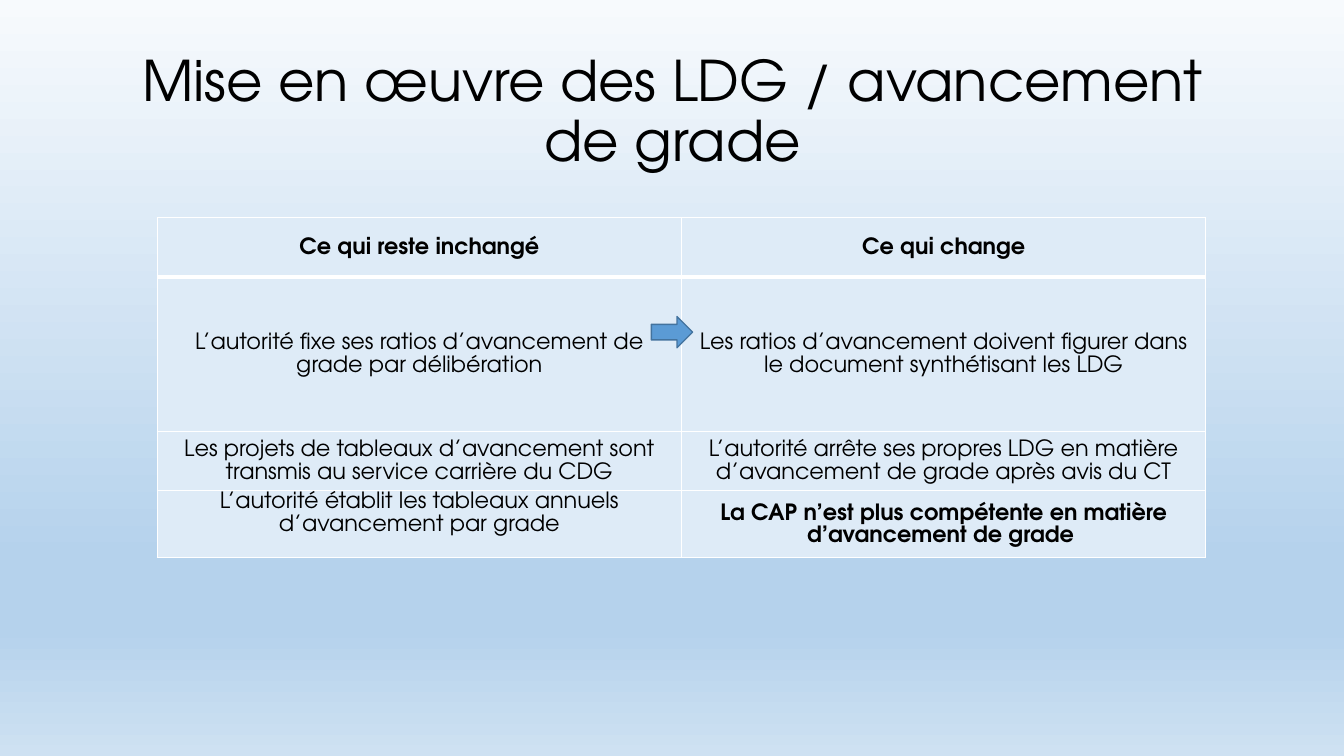
"""Build the slide on promotion guidelines with its comparison table."""
import dataclasses

import lxml.etree
import pptx
import pptx.dml.color
import pptx.enum.shapes
import pptx.enum.text
import pptx.oxml.ns
import pptx.util

PX = 9144
CELL_MARGIN = 7
ROW_HEIGHTS = (59, 153, 59, 59)
ROWS = (
    ("Ce qui reste inchangé", "Ce qui change"),
    ("L’autorité fixe ses ratios d’avancement de grade par délibération",
     "Les ratios d’avancement doivent figurer dans le document synthétisant les LDG"),
    ("Les projets de tableaux d’avancement sont transmis au service carrière du CDG",
     "L’autorité arrête ses propres LDG en matière d’avancement de grade après avis du CT"),
    ("L’autorité établit les tableaux annuels d’avancement par grade",
     "La CAP n’est plus compétente en matière d’avancement de grade "),
)
BOLD_CELLS = {(0, 0), (0, 1), (3, 1)}
BOTTOM_MARGINS = {(3, 0): 22}


@dataclasses.dataclass(frozen=True)
class Theme:
    """Hold the colours, font and type sizes."""
    font: str = "TeX Gyre Adventor"
    title_size: int = 40
    body_size: int = 16
    text: str = "000000"
    cell: str = "DEEBF7"
    border: str = "FFFFFF"
    arrow: str = "5B9BD5"
    arrow_line: str = "43739E"
    background: tuple = ((0, "F7FAFD"), (74, "B5D2EC"), (83, "B5D2EC"), (100, "CEE1F2"))


def rgb(value):
    """Turn a hex string into a colour."""
    return pptx.dml.color.RGBColor.from_string(value)


def add_xml(parent, tag, **attributes):
    """Append a drawing element to its parent."""
    return lxml.etree.SubElement(parent, pptx.oxml.ns.qn(tag), attributes)


def write_text(frame, text, *, font, size, color, spacing, bold=False):
    """Write one centred paragraph with the given format."""
    frame.word_wrap = True
    paragraph = frame.paragraphs[0]
    paragraph.alignment = pptx.enum.text.PP_ALIGN.CENTER
    paragraph.line_spacing = spacing
    run = paragraph.add_run()
    run.text = text
    run.font.name = font
    run.font.size = pptx.util.Pt(size)
    run.font.bold = bold
    run.font.color.rgb = rgb(color)


class SlideBuilder:
    """Draw elements on the current slide in one style."""

    def __init__(self, slide, theme):
        """Keep the slide and the theme."""
        self.slide = slide
        self.theme = theme

    def background(self):
        """Fill the background with the vertical gradient."""
        fill = self.slide.background.fill
        fill.gradient()
        fill.gradient_angle = 270
        stops = self.slide.element.xpath(".//p:bg//a:gsLst")[0]
        for stop in list(stops):
            stops.remove(stop)
        for position, color in self.theme.background:
            stop = add_xml(stops, "a:gs", pos=str(position * 1000))
            add_xml(stop, "a:srgbClr", val=color)

    def title(self, text, left, top, width, height):
        """Place and fill the title placeholder."""
        title = self.slide.shapes.title
        title.left, title.top = left * PX, top * PX
        title.width, title.height = width * PX, height * PX
        frame = title.text_frame
        frame.auto_size = pptx.enum.text.MSO_AUTO_SIZE.NONE
        frame.vertical_anchor = pptx.enum.text.MSO_ANCHOR.MIDDLE
        write_text(frame, text, font=self.theme.font, size=self.theme.title_size,
                   color=self.theme.text, spacing=0.9)

    def table(self, rows, left, top, column_width, row_heights):
        """Add the table with its texts and borders."""
        columns = len(rows[0])
        table = self.slide.shapes.add_table(
            len(rows), columns, left * PX, top * PX,
            columns * column_width * PX, sum(row_heights) * PX).table
        table.first_row = table.horz_banding = False
        for column in table.columns:
            column.width = column_width * PX
        for row_index, texts in enumerate(rows):
            table.rows[row_index].height = row_heights[row_index] * PX
            for column_index, text in enumerate(texts):
                self.cell(table.cell(row_index, column_index), text, row_index, column_index)

    def cell(self, cell, text, row, column):
        """Format and fill one table cell."""
        cell.margin_left = cell.margin_right = CELL_MARGIN * PX
        cell.margin_top = 0
        cell.margin_bottom = BOTTOM_MARGINS.get((row, column), 0) * PX
        cell.vertical_anchor = pptx.enum.text.MSO_ANCHOR.MIDDLE
        widths = {"L": 1, "R": 1, "T": 3 if row == 1 else 1, "B": 3 if row == 0 else 1}
        properties = cell._tc.get_or_add_tcPr()
        for side, width in widths.items():
            line = add_xml(properties, f"a:ln{side}", w=str(pptx.util.Pt(width)))
            add_xml(add_xml(line, "a:solidFill"), "a:srgbClr", val=self.theme.border)
        cell.fill.solid()
        cell.fill.fore_color.rgb = rgb(self.theme.cell)
        write_text(cell.text_frame, text, font=self.theme.font, size=self.theme.body_size,
                   color=self.theme.text, spacing=pptx.util.Pt(self.theme.body_size),
                   bold=(row, column) in BOLD_CELLS)

    def arrow(self, left, top, width, height):
        """Add a block arrow pointing right."""
        arrow = self.slide.shapes.add_shape(
            pptx.enum.shapes.MSO_SHAPE.RIGHT_ARROW,
            left * PX, top * PX, width * PX, height * PX)
        arrow.shadow.inherit = False
        arrow.fill.solid()
        arrow.fill.fore_color.rgb = rgb(self.theme.arrow)
        arrow.line.color.rgb = rgb(self.theme.arrow_line)
        arrow.line.width = pptx.util.Pt(1)


def main():
    """Build and save the presentation."""
    presentation = pptx.Presentation()
    presentation.slide_width = 1333 * PX
    presentation.slide_height = 750 * PX
    slide = presentation.slides.add_slide(presentation.slide_layouts[5])
    builder = SlideBuilder(slide, Theme())
    builder.background()
    builder.title("Mise en œuvre des LDG / avancement de grade", 92, 40, 1150, 145)
    builder.table(ROWS, 156, 216, 520, ROW_HEIGHTS)
    builder.arrow(646, 314, 41, 31)
    presentation.save("out.pptx")


if __name__ == "__main__":
    main()
